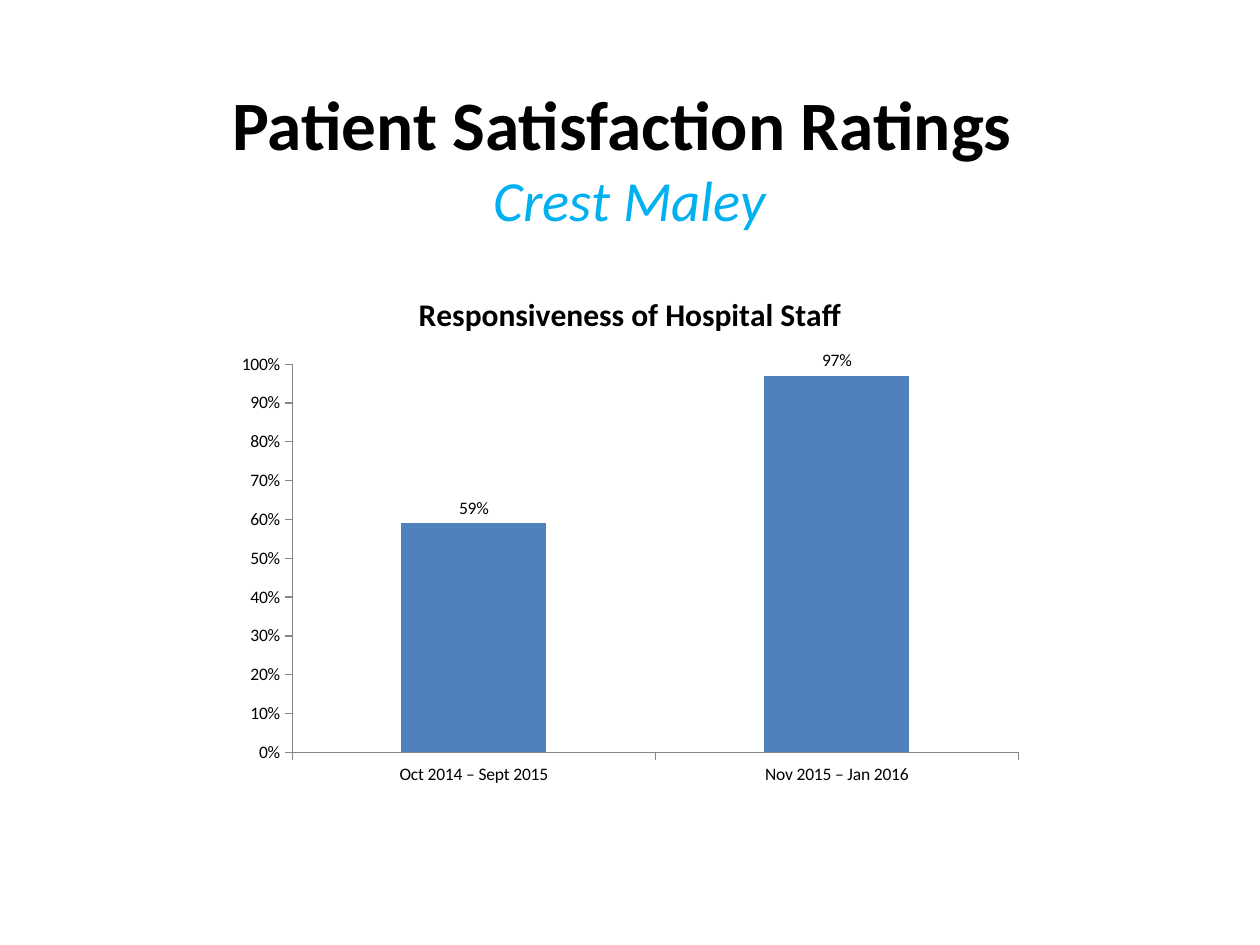
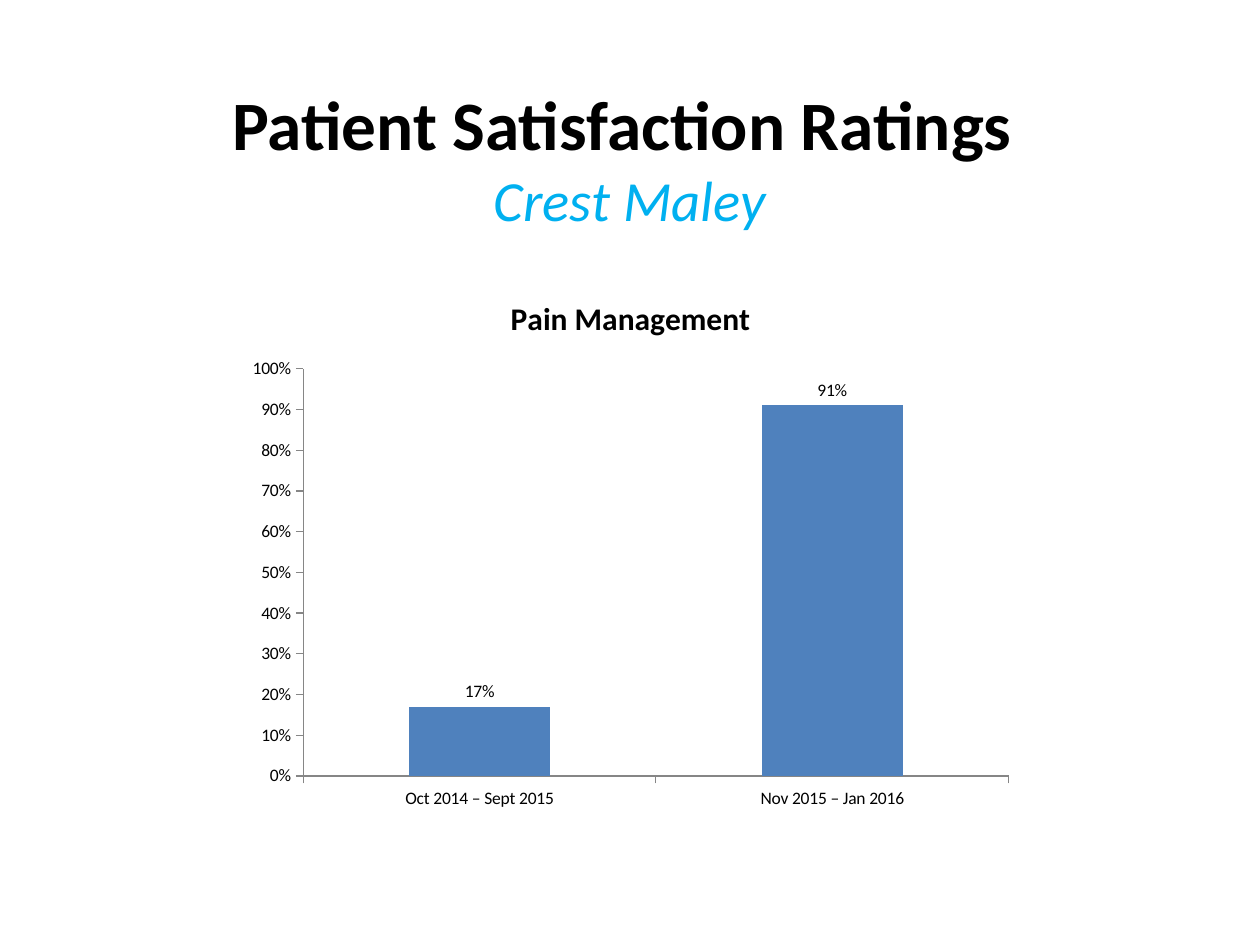
from pptx import Presentation
from pptx.chart.data import CategoryChartData
from pptx.dml.color import RGBColor
from pptx.enum.chart import XL_CHART_TYPE, XL_LABEL_POSITION, XL_TICK_MARK
from pptx.enum.text import MSO_ANCHOR, MSO_AUTO_SIZE, PP_ALIGN
from pptx.util import Inches, Pt

COLUMNS = XL_CHART_TYPE.COLUMN_CLUSTERED
OUTSIDE_END = XL_LABEL_POSITION.OUTSIDE_END
TICK_OUT = XL_TICK_MARK.OUTSIDE
MIDDLE = MSO_ANCHOR.MIDDLE
NO_AUTOFIT = MSO_AUTO_SIZE.NONE
CENTER = PP_ALIGN.CENTER

FONT = "Calibri"
COLORS = {"text": "000000", "accent": "00B0F0", "bar": "4F81BD", "axis": "868686"}
TITLE_ONLY = 5

TITLE = "Patient Satisfaction Ratings "
SURVEY = "Crest Maley"
PERIODS = ["Oct 2014 – Sept 2015", "Nov 2015 – Jan 2016"]

# Measure, ratings per period, chart frame (left, top, width, height)
RATINGS = [
    ("Responsiveness of Hospital Staff", (0.59, 0.97), (1.79, 2.14, 6.42, 4.17)),
    ("Pain Management", (0.17, 0.91), (1.88, 2.17, 6.25, 4.33)),
]


def color(name):
    return RGBColor.from_string(COLORS[name])


def style_font(font, size, color_name="text", bold=False, italic=False):
    font.name = FONT
    font.size = Pt(size)
    font.bold = bold
    font.italic = italic
    font.color.rgb = color(color_name)


def add_title(slide):
    box = slide.shapes.title
    box.left, box.top = Inches(0.5), Inches(0.66)
    box.width, box.height = Inches(9), Inches(1.17)
    frame = box.text_frame
    frame.auto_size = NO_AUTOFIT
    frame.vertical_anchor = MIDDLE
    para = frame.paragraphs[0]
    para.text = f"{TITLE}\v{SURVEY}"  # \v is a line break
    para.alignment = CENTER
    heading, survey = para.runs
    style_font(heading.font, 39.6, bold=True)
    style_font(survey.font, 32.4, "accent", italic=True)


def style_axis(axis):
    axis.has_major_gridlines = False
    axis.major_tick_mark = TICK_OUT
    axis.format.line.color.rgb = color("axis")
    axis.format.line.width = Pt(0.75)


def add_rating_chart(slide, measure, ratings, frame):
    data = CategoryChartData(number_format="0%")
    data.categories = PERIODS
    data.add_series(measure, ratings)
    chart = slide.shapes.add_chart(COLUMNS, *map(Inches, frame), data).chart
    style_font(chart.font, 10)
    chart.has_legend = False

    # Chart title
    chart.has_title = True
    title = chart.chart_title
    title.include_in_layout = False
    title.text_frame.text = measure
    style_font(title.text_frame.paragraphs[0].runs[0].font, 18, bold=True)

    # Axes
    style_axis(chart.category_axis)
    value_axis = chart.value_axis
    style_axis(value_axis)
    value_axis.minimum_scale, value_axis.maximum_scale = 0, 1
    value_axis.major_unit = 0.1
    value_axis.tick_labels.number_format = "0%"
    value_axis.tick_labels.number_format_is_linked = False

    # Bars and their labels
    plot = chart.plots[0]
    plot.gap_width = 150
    plot.vary_by_categories = False
    fill = plot.series[0].format.fill
    fill.solid()
    fill.fore_color.rgb = color("bar")
    plot.has_data_labels = True
    labels = plot.data_labels
    labels.show_value = True
    labels.number_format = "0%"
    labels.number_format_is_linked = False
    labels.position = OUTSIDE_END


def main():
    deck = Presentation()
    deck.slide_width, deck.slide_height = Inches(10), Inches(7.5)
    for measure, ratings, frame in RATINGS:
        slide = deck.slides.add_slide(deck.slide_layouts[TITLE_ONLY])
        add_rating_chart(slide, measure, ratings, frame)
        add_title(slide)
    deck.save("out.pptx")


if __name__ == "__main__":
    main()
